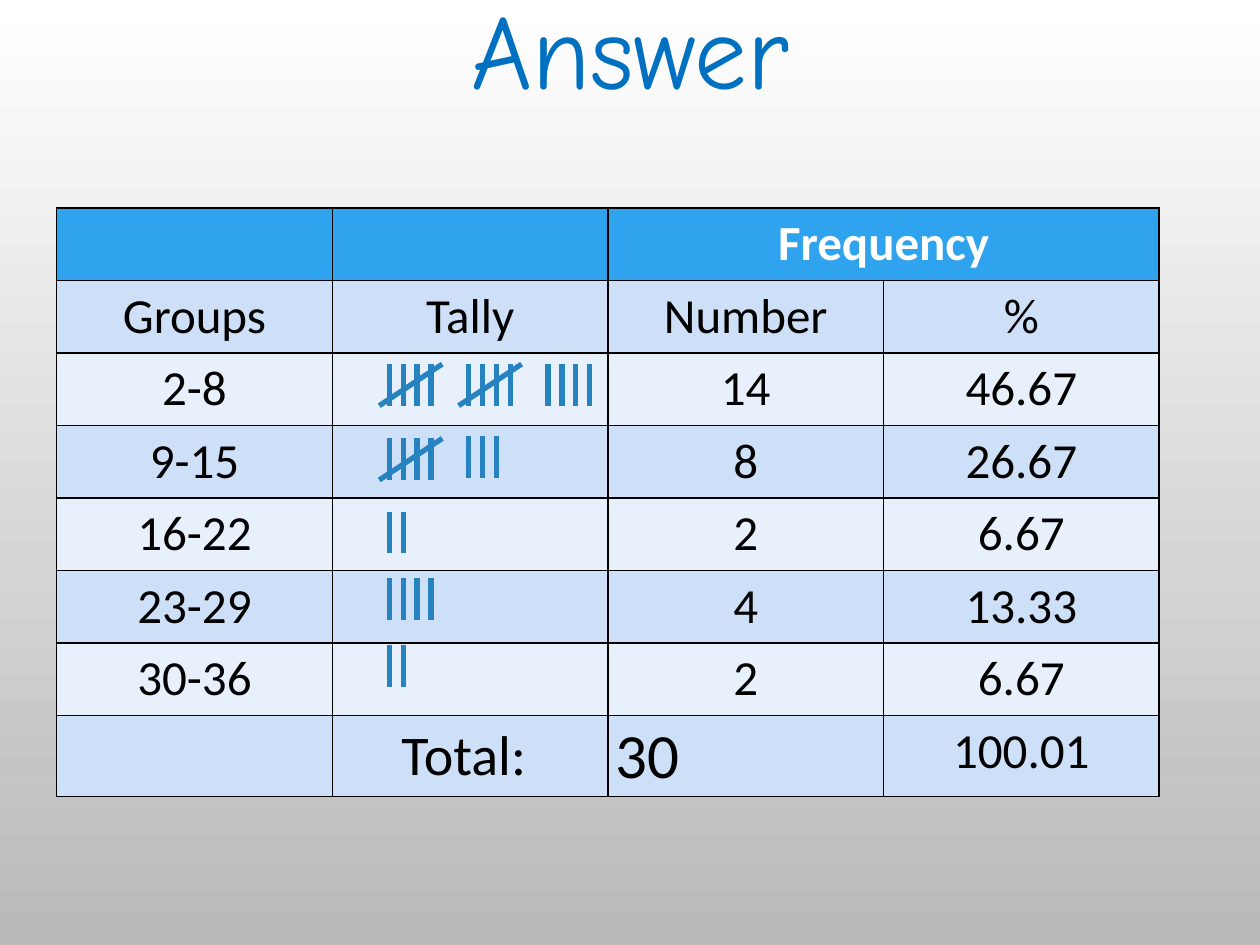
from lxml.etree import SubElement
from pptx import Presentation
from pptx.dml.color import RGBColor
from pptx.enum.shapes import MSO_CONNECTOR as Connector
from pptx.enum.text import MSO_ANCHOR as Anchor, MSO_AUTO_SIZE as AutoSize, PP_ALIGN as Align
from pptx.oxml import parse_xml
from pptx.oxml.ns import nsdecls, qn
from pptx.util import Inches, Pt

WIDTH, HEIGHT = 10, 7.5
COLORS = {
    "top": "FFFFFF", "bottom": "B9B9B9", "title": "0070C0", "header": "2FA3EE",
    "dark_band": "CDE0F8", "light_band": "E8F0FC", "tally": "2683BF",
    "text": "000000", "header_text": "FFFFFF", "border": "000000",
}
ROWS = [
    ["", "", "Frequency", ""],
    ["Groups", "Tally", "Number", "%"],
    ["2-8", "", "14", "46.67"],
    ["9-15", "", "8", "26.67"],
    ["16-22", "", "2", "6.67"],
    ["23-29", "", "4", "13.33"],
    ["30-36", "", "2", "6.67"],
    ["", "Total: ", "", "100.01"],
]
ROW_HEIGHT, TOTAL_HEIGHT = 0.57, 0.63
# Each tally bundle: position in its row, top, count
BUNDLES = [
    (0, 2.89, 5), (1, 2.89, 5), (2, 2.89, 4),
    (0, 3.48, 5), (1, 3.46, 3),
    (0, 4.06, 2), (0, 4.59, 4), (0, 5.12, 2),
]
TALLY_LEFT, BUNDLE_STEP = 3.09, 0.63
STROKE_STEP, STROKE_HEIGHT = 0.11, 0.33


def color(name):
    return RGBColor.from_string(COLORS[name])


def write(frame, text, size=28, font="Calibri", fill="text", bold=False, align=Align.CENTER):
    paragraph = frame.paragraphs[0]
    paragraph.alignment = align
    run = paragraph.add_run()
    run.text = text
    run.font.size = Pt(size)
    run.font.name = font
    run.font.bold = bold
    run.font.color.rgb = color(fill)


def paint_background(slide):
    fill = slide.background.fill
    fill.gradient()
    fill.gradient_angle = 270
    for stop, name in zip(fill.gradient_stops, ("top", "bottom")):
        stop.color.rgb = color(name)


def place_title(slide, left, top, width, height):
    title = slide.shapes.title
    title.left, title.top, title.width, title.height = map(Inches, (left, top, width, height))
    title.text_frame.auto_size = AutoSize.NONE
    title.text_frame.vertical_anchor = Anchor.TOP
    write(title.text_frame, "Answer", size=60, font="Comic Neue", fill="title")


def draw_borders(cell):
    properties = cell._tc.get_or_add_tcPr()
    for index, side in enumerate(("lnL", "lnR", "lnT", "lnB")):
        properties.insert(index, parse_xml(
            f'<a:{side} {nsdecls("a")} w="{Pt(1)}"><a:solidFill>'
            f'<a:srgbClr val="{COLORS["border"]}"/></a:solidFill></a:{side}>'))


def place_table(slide, left, top, width):
    height = ROW_HEIGHT * (len(ROWS) - 1) + TOTAL_HEIGHT
    frame = slide.shapes.add_table(len(ROWS), len(ROWS[0]), *map(Inches, (left, top, width, height)))
    table = frame.table
    for row in table.rows:
        row.height = Inches(ROW_HEIGHT)
    table.rows[len(ROWS) - 1].height = Inches(TOTAL_HEIGHT)
    table.cell(0, 2).merge(table.cell(0, 3))
    for row_index, values in enumerate(ROWS):
        header = row_index == 0
        band = "header" if header else "dark_band" if row_index % 2 else "light_band"
        for column_index, text in enumerate(values):
            cell = table.cell(row_index, column_index)
            cell.fill.solid()
            cell.fill.fore_color.rgb = color(band)
            draw_borders(cell)
            if text:
                write(cell.text_frame, text, size=32 if text.startswith("Total") else 28,
                      fill="header_text" if header else "text", bold=header)


def draw_stroke(group, *ends):
    line = group.shapes.add_connector(Connector.STRAIGHT, *map(Inches, ends))
    line.line.width = Pt(3)
    line.line.color.rgb = color("tally")
    SubElement(line._element.spPr, qn("a:effectLst"))


def place_bundle(slide, left, top, count):
    group = slide.shapes.add_group_shape()
    bottom = top + STROKE_HEIGHT
    for index in range(min(count, 4)):
        x = left + index * STROKE_STEP
        draw_stroke(group, x, top, x, bottom)
    # The fifth mark crosses the other four
    if count == 5:
        draw_stroke(group, left + 0.42, top, left - 0.08, bottom)


def place_total(slide, left, top, width, height):
    box = slide.shapes.add_textbox(*map(Inches, (left, top, width, height)))
    box.text_frame.word_wrap = False
    write(box.text_frame, "30", size=36, align=Align.LEFT)


def main():
    presentation = Presentation()
    presentation.slide_width, presentation.slide_height = Inches(WIDTH), Inches(HEIGHT)
    slide = presentation.slides.add_slide(presentation.slide_layouts[5])
    paint_background(slide)
    place_title(slide, 0, -0.17, WIDTH, 1.11)
    place_table(slide, 0.45, 1.65, 0.875 * WIDTH)
    for position, top, count in BUNDLES:
        place_bundle(slide, TALLY_LEFT + position * BUNDLE_STEP, top, count)
    place_total(slide, 4.79, 5.63, 0.76, 0.71)
    presentation.save("out.pptx")


if __name__ == "__main__":
    main()
